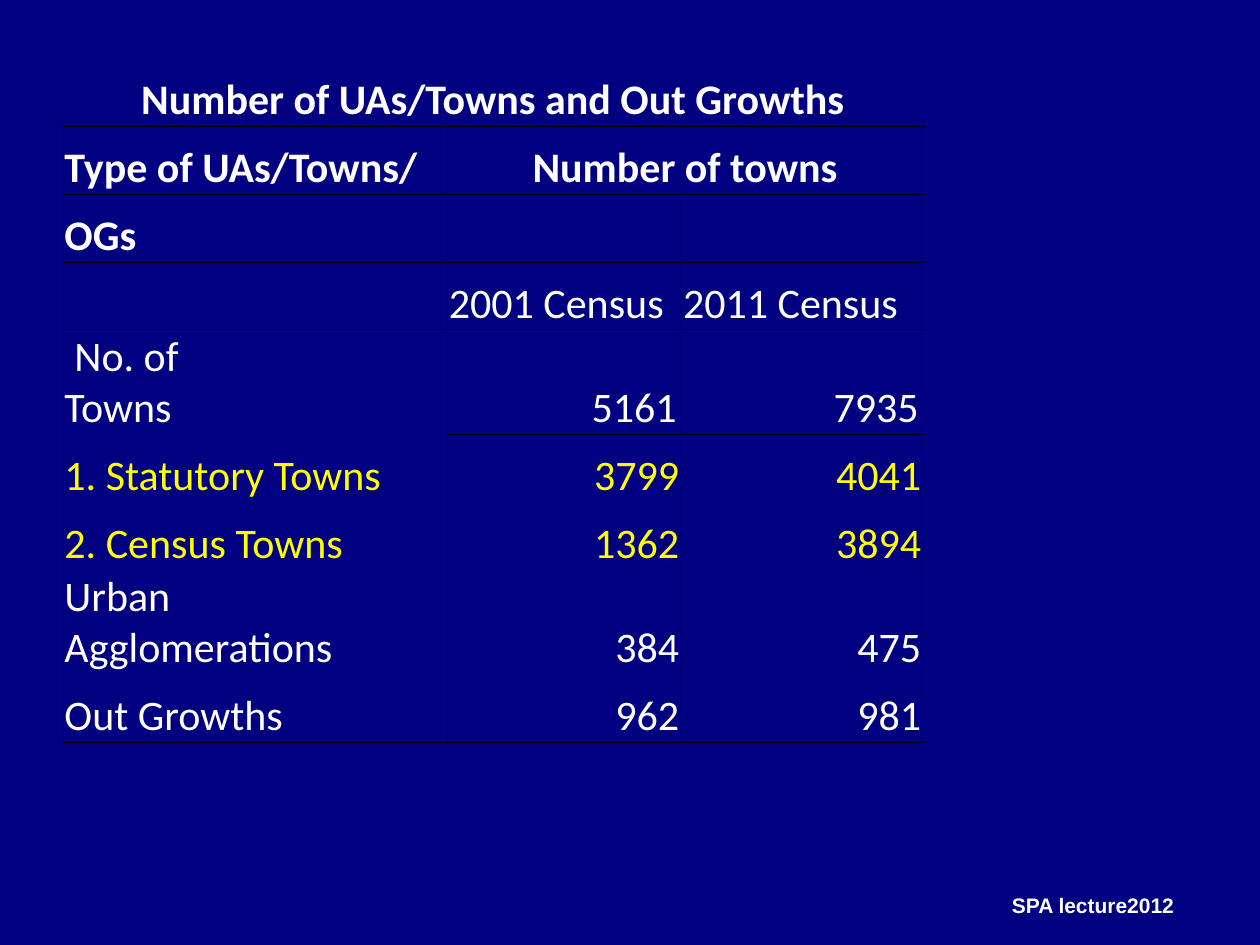
from dataclasses import dataclass
from lxml.etree import SubElement
from pptx import Presentation
from pptx.dml.color import RGBColor
from pptx.enum.text import MSO_ANCHOR as Anchor, PP_ALIGN as Align
from pptx.oxml.ns import qn
from pptx.util import Cm, Pt


@dataclass(frozen=True)
class Theme:
    background: str = "000080"
    text: str = "FFFFFF"
    accent: str = "FFFF00"
    line: str = "000000"
    table_font: str = "Calibri"
    footer_font: str = "Arial"
    table_size: int = 24
    footer_size: int = 12
    line_width: float = 0.5


THEME = Theme()
NO_GRID_STYLE = "{2D5ABB26-0587-4C30-8999-92F81FD0307C}"
ROWS = [
    ("Number of UAs/Towns and Out Growths", "", "", ""),
    ("Type of UAs/Towns/", "", "Number of towns", ""),
    ("OGs", "", "", ""),
    ("", "", "2001 Census", "2011 Census"),
    ("No. of Towns", "", "5161", "7935"),
    ("1. Statutory Towns", "", "3799", "4041"),
    ("2. Census Towns", "", "1362", "3894"),
    ("Urban Agglomerations", "", "384", "475"),
    ("Out Growths", "", "962", "981"),
]
SPANS = {(0, 0): 4, (1, 0): 2, (1, 2): 2} | {(row, 0): 2 for row in range(5, 9)}
COLUMN_WIDTHS = [3.33, 4.42, 4.72, 4.88]
ROW_HEIGHTS = [1.27, 1.37, 1.37, 1.37, 2.1, 1.37, 1.37, 2.1, 1.37]
HEADER_ROWS, TOTAL_ROW, ACCENT_ROWS = 3, 4, (5, 6)
FOOTER = "SPA lecture2012"


def style_font(para, name, size, color, bold):
    font = para.font
    font.name, font.size, font.bold = name, Pt(size), bold
    font.color.rgb = RGBColor.from_string(color)


def has_vertical(edge, row):
    first_row = {0: 1, 2: 1, 3: 3, 4: 1}
    return row >= first_row.get(edge, len(ROWS))


def has_horizontal(edge, column):
    return edge in (1, 3, len(ROWS)) or (edge == 4 and column >= 2)


def draw_borders(cell, row, column, span):
    sides = {
        "a:lnL": has_vertical(column, row),
        "a:lnR": has_vertical(column + span, row),
        "a:lnT": has_horizontal(row, column),
        "a:lnB": has_horizontal(row + 1, column),
    }
    properties = cell._tc.get_or_add_tcPr()
    for tag, visible in sides.items():
        if visible:
            line = SubElement(properties, qn(tag), w=str(Pt(THEME.line_width)))
            fill = SubElement(line, qn("a:solidFill"))
            SubElement(fill, qn("a:srgbClr"), val=THEME.line)


def format_cell(cell, row, column, text):
    cell.vertical_anchor = Anchor.BOTTOM
    cell.margin_left = cell.margin_top = Cm(0.03)
    cell.margin_right = Cm(0.1 if row == TOTAL_ROW else 0.05)
    cell.margin_bottom = 0
    cell.text = text
    para = cell.text_frame.paragraphs[0]
    if text.isdigit():
        para.alignment = Align.RIGHT
    elif row < 2 and (row == 0 or column == 2):
        para.alignment = Align.CENTER
    if row == TOTAL_ROW and column == 0:
        para._p.get_or_add_pPr().set("indent", str(Cm(0.2)))
    color = THEME.accent if row in ACCENT_ROWS else THEME.text
    style_font(para, THEME.table_font, THEME.table_size, color, row < HEADER_ROWS)


def add_towns_table(page):
    frame = page.shapes.add_table(
        len(ROWS), len(COLUMN_WIDTHS), Cm(1.27), Cm(1.27),
        Cm(sum(COLUMN_WIDTHS)), Cm(sum(ROW_HEIGHTS)))
    table = frame.table
    table.first_row = table.horz_banding = False
    table._tbl.tblPr.find(qn("a:tableStyleId")).text = NO_GRID_STYLE
    for column, width in zip(table.columns, COLUMN_WIDTHS):
        column.width = Cm(width)
    for row, height in zip(table.rows, ROW_HEIGHTS):
        row.height = Cm(height)
    for (row, column), span in SPANS.items():
        table.cell(row, column).merge(table.cell(row, column + span - 1))
    for row, texts in enumerate(ROWS):
        for column, text in enumerate(texts):
            cell = table.cell(row, column)
            if not cell.is_spanned:
                format_cell(cell, row, column, text)
            draw_borders(cell, row, column, SPANS.get((row, column), 1))
            cell.fill.background()


def add_footer(page):
    box = page.shapes.add_textbox(Cm(15.88), Cm(17.35), Cm(8.04), Cm(1.27))
    frame = box.text_frame
    frame.word_wrap = True
    frame.vertical_anchor = Anchor.BOTTOM
    frame.text = FOOTER
    para = frame.paragraphs[0]
    para.alignment = Align.RIGHT
    style_font(para, THEME.footer_font, THEME.footer_size, THEME.text, True)


def main():
    deck = Presentation()
    deck.slide_width, deck.slide_height = Cm(25.4), Cm(19.05)
    page = deck.slides.add_slide(deck.slide_layouts[6])
    page.background.fill.solid()
    page.background.fill.fore_color.rgb = RGBColor.from_string(THEME.background)
    add_towns_table(page)
    add_footer(page)
    deck.save("out.pptx")


if __name__ == "__main__":
    main()
